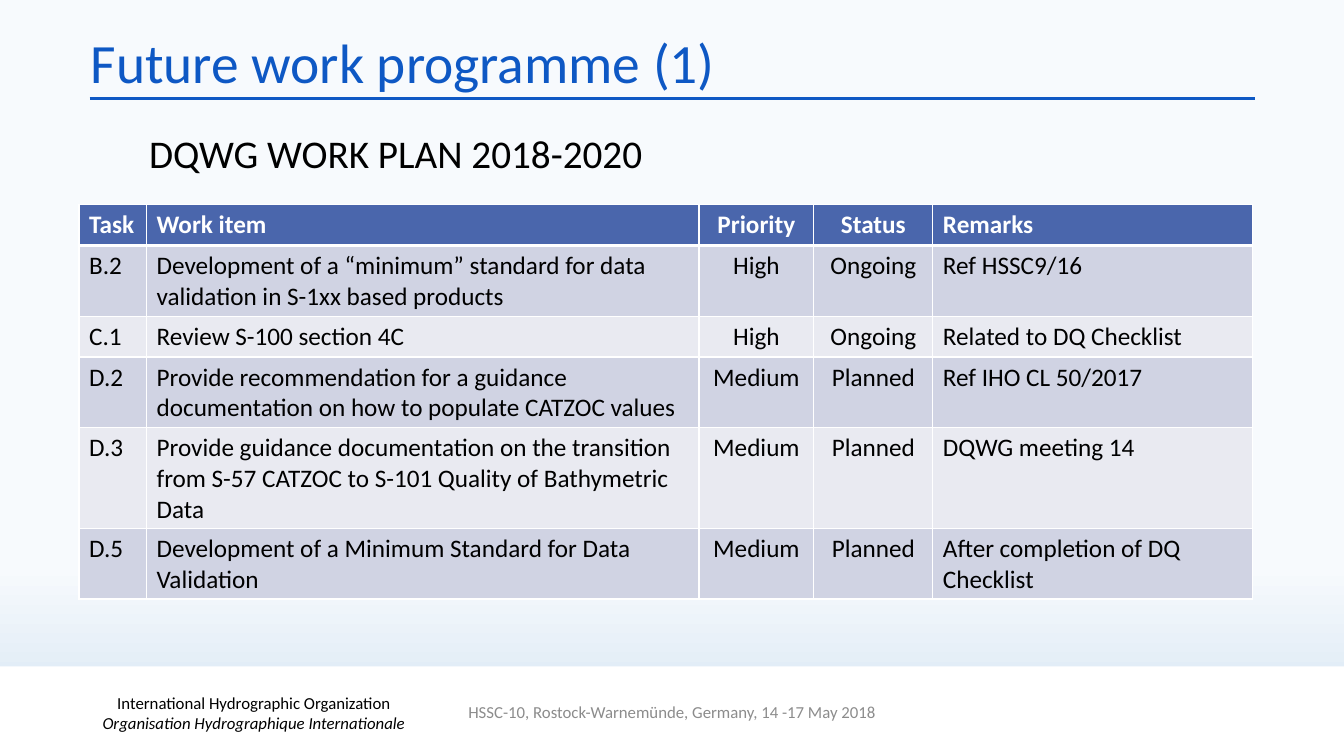
"""Builds the slide with the work plan table for 2018-2020."""
from lxml.etree import SubElement as Sub
from pptx import Presentation
from pptx.dml.color import RGBColor
from pptx.enum.shapes import MSO_CONNECTOR as Link, MSO_SHAPE as Form
from pptx.enum.text import MSO_ANCHOR as Anchor, PP_ALIGN as Align
from pptx.oxml import parse_xml
from pptx.oxml.ns import nsdecls, qn
from pptx.util import Pt


def tint(code):
    """Turn a hex string into a colour."""
    return RGBColor.from_string(code)


def put(para, text, size=18, color="000000", bold=False, italic=False, align=Align.LEFT):
    """Write one formatted run into a paragraph."""
    para.alignment = align
    run = para.add_run()
    run.text = text
    font = run.font
    font.name, font.size, font.bold, font.italic = "Calibri", Pt(size), bold, italic
    font.color.rgb = tint(color)


BLUE, WHITE = "0E58C4", "FFFFFF"
deck = Presentation()
deck.slide_width, deck.slide_height = Pt(960), Pt(540)
slide = deck.slides.add_slide(deck.slide_layouts[5])
shapes = slide.shapes

back = slide.background.fill
back.gradient()
back.gradient_angle = 270
for stop, (place, color) in zip(back.gradient_stops, [(0.75, "F7FAFD"), (1, "D0E2F1")]):
    stop.position, stop.color.rgb = place, tint(color)

rule = shapes.add_connector(Link.STRAIGHT, Pt(64), Pt(70.6), Pt(896.4), Pt(70.6))
rule.line.color.rgb, rule.line.width = tint(BLUE), Pt(2.25)
Sub(rule._element.spPr, qn("a:effectLst"))

band = shapes.add_shape(Form.RECTANGLE, 0, Pt(476), Pt(960), Pt(64))
band.shadow.inherit = False
band.fill.solid()
band.fill.fore_color.rgb = tint(WHITE)
band.line.fill.background()

title = shapes.title
title.left, title.top, title.width, title.height = Pt(57.6), Pt(21.6), Pt(707), Pt(50.4)
title.text_frame.vertical_anchor = Anchor.MIDDLE
head = title.text_frame.paragraphs[0]
head.line_spacing = 0.9
put(head, "Future work programme (1)", size=39.6, color=BLUE)

foot = dict(size=12, align=Align.CENTER)
notes = [
    (19.4, 494.6, 324, 28.8, Anchor.MIDDLE, [
        ("International Hydrographic Organization", foot),
        ("Organisation Hydrographique Internationale", dict(foot, italic=True))]),
    (318.2, 494, 324, 28.8, Anchor.MIDDLE, [
        ("HSSC-10, Rostock-Warnemünde, Germany, 14 -17 May 2018", dict(foot, color="8C8C8C"))]),
    (99.4, 88.6, 592.6, 41, Anchor.TOP, [("DQWG WORK PLAN 2018-2020", dict(size=28))]),
]
for left, top, width, height, anchor, lines in notes:
    frame = shapes.add_textbox(Pt(left), Pt(top), Pt(width), Pt(height)).text_frame
    frame.word_wrap, frame.vertical_anchor = True, anchor
    for i, (text, form) in enumerate(lines):
        put(frame.add_paragraph() if i else frame.paragraphs[0], text, **form)

tasks = [
    ("Task", "Work item", "Priority", "Status", "Remarks"),
    ("B.2", "Development of a “minimum” standard for data validation in S-1xx based products",
     "High", "Ongoing", "Ref HSSC9/16"),
    ("C.1", "Review S-100 section 4C", "High", "Ongoing", "Related to DQ Checklist"),
    ("D.2", "Provide recommendation for a guidance documentation on how to populate CATZOC values",
     "Medium", "Planned", "Ref IHO CL 50/2017"),
    ("D.3", "Provide guidance documentation on the transition from S-57 CATZOC to S-101 "
     "Quality of Bathymetric Data", "Medium", "Planned", "DQWG meeting 14"),
    ("D.5", "Development of a Minimum Standard for Data Validation",
     "Medium", "Planned", "After completion of DQ Checklist"),
]
widths = [48.2, 394.6, 82.1, 85, 228.2]
grid = shapes.add_table(len(tasks), len(widths), Pt(56.5), Pt(146.2),
                        Pt(sum(widths)), Pt(29.2 * len(tasks))).table
for col, width in zip(grid.columns, widths):
    col.width = Pt(width)
for r, task in enumerate(tasks):
    grid.rows[r].height = Pt(29.2)
    fill = "D0D3E3" if r % 2 else "E9EAF1"
    for c, text in enumerate(task):
        cell = grid.cell(r, c)
        cell.fill.solid()
        cell.fill.fore_color.rgb = tint(fill if r else "4A66AC")
        put(cell.text_frame.paragraphs[0], text, color="000000" if r else WHITE,
            bold=r == 0, align=Align.CENTER if c in (2, 3) else Align.LEFT)
        props = cell._tc.get_or_add_tcPr()
        for i, side in enumerate("LRTB"):
            thick = 3 if (r, side) in [(0, "B"), (1, "T")] else 1
            props.insert(i, parse_xml(
                f'<a:ln{side} {nsdecls("a")} w="{Pt(thick)}"><a:solidFill>'
                f'<a:srgbClr val="{WHITE}"/></a:solidFill></a:ln{side}>'))

deck.save("out.pptx")
